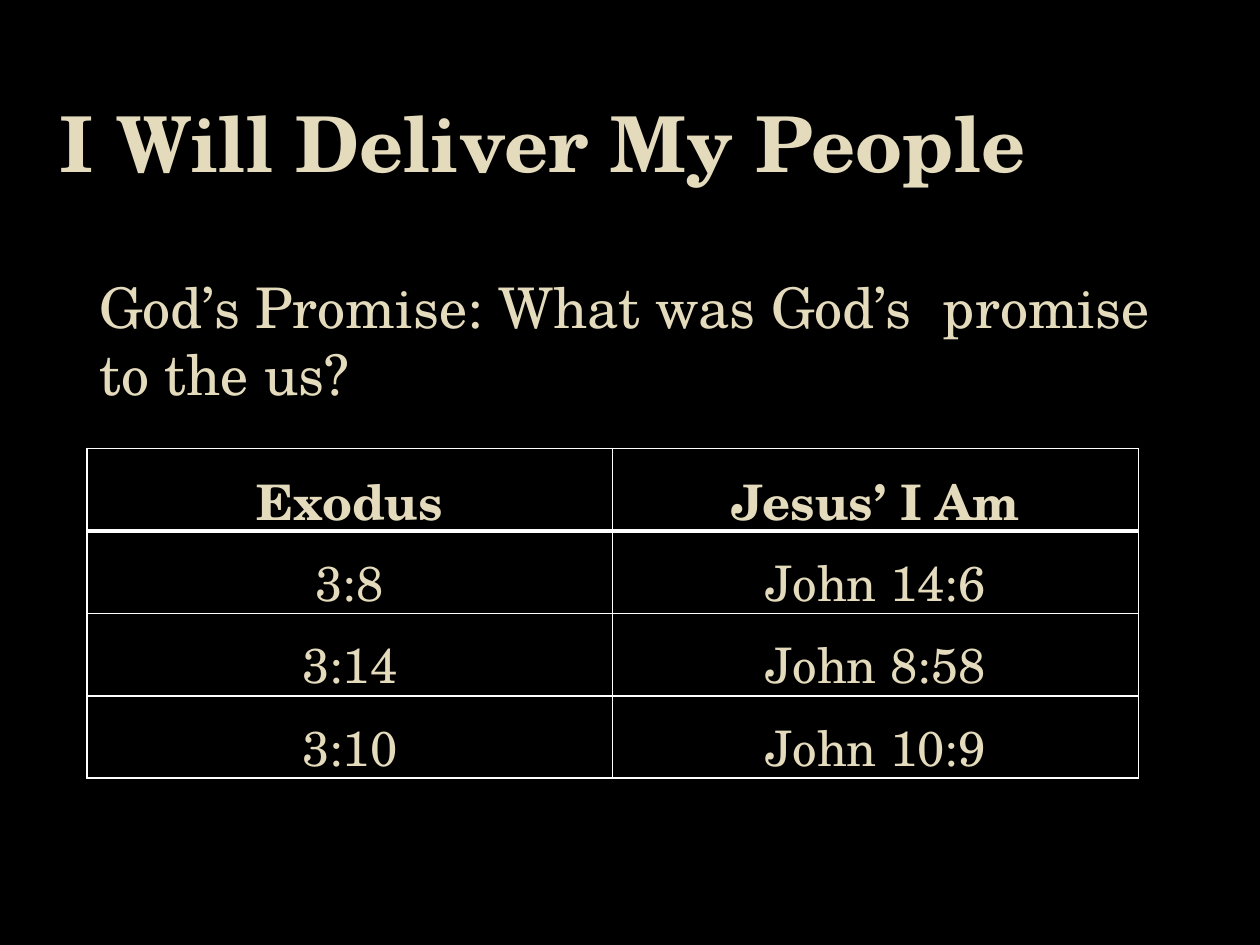
"""Build the slide on God's promise with its table of verses."""
from typing import NamedTuple

from lxml.etree import SubElement
from pptx import Presentation
from pptx.dml.color import RGBColor
from pptx.enum.text import MSO_ANCHOR as Anchor, PP_ALIGN as Align
from pptx.oxml.ns import qn
from pptx.util import Cm, Pt

FONT = "TeX Gyre Schola"
CREAM, WHITE, BLACK = "E4DABC", "FFFFFF", "000000"


class Style(NamedTuple):
    size: int
    bold: bool = False
    align: Align = Align.LEFT


class Box(NamedTuple):
    left: float
    top: float
    width: float
    height: float

    def lengths(self) -> list[Cm]:
        return [Cm(value) for value in self]


class VersePair(NamedTuple):
    exodus: str
    jesus: str


VERSES = [
    VersePair("Exodus", "Jesus’ I Am"),
    VersePair("3:8", "John 14:6"),
    VersePair("3:14", "John 8:58"),
    VersePair("3:10", "John 10:9"),
]
HEADING = Style(28, True, Align.CENTER)
VERSE = Style(28, False, Align.CENTER)


def paint(target, color: str) -> None:
    target.solid()
    target.fore_color.rgb = RGBColor.from_string(color)


def write(frame, text: str, style: Style) -> None:
    paragraph = frame.paragraphs[0]
    paragraph.alignment = style.align
    run = paragraph.add_run()
    run.text = text
    run.font.name = FONT
    run.font.size = Pt(style.size)
    run.font.bold = style.bold
    paint(run.font.fill, CREAM)


def add_text(slide, box: Box, text: str, style: Style, anchor: Anchor) -> None:
    frame = slide.shapes.add_textbox(*box.lengths()).text_frame
    frame.word_wrap = True
    frame.vertical_anchor = anchor
    write(frame, text, style)


def add_border(cell, side: str, points: int) -> None:
    line = SubElement(cell._tc.get_or_add_tcPr(), qn(f"a:ln{side}"), w=str(Pt(points)))
    fill = SubElement(line, qn("a:solidFill"))
    SubElement(fill, qn("a:srgbClr"), val=WHITE)


def add_verse_table(slide, box: Box) -> None:
    columns = len(VersePair._fields)
    table = slide.shapes.add_table(len(VERSES), columns, *box.lengths()).table
    table.horz_banding = False
    for row, pair in enumerate(VERSES):
        for column, text in enumerate(pair):
            cell = table.cell(row, column)
            cell.margin_top = Cm(0.3)
            widths = {"L": 1, "R": 1, "T": 3 if row == 1 else 1, "B": 3 if row == 0 else 1}
            for side, points in widths.items():
                add_border(cell, side, points)
            cell.fill.background()
            write(cell.text_frame, text, HEADING if row == 0 else VERSE)


def main() -> None:
    deck = Presentation()
    deck.slide_width, deck.slide_height = Cm(25.4), Cm(19.05)
    slide = deck.slides.add_slide(deck.slide_layouts[6])
    paint(slide.background.fill, BLACK)
    add_text(slide, Box(0, 1.02, 21.9, 3.68), "I Will Deliver My People",
             Style(44, True, Align.CENTER), Anchor.MIDDLE)
    add_text(slide, Box(1.75, 5.36, 21.9, 4.37),
             "God’s Promise: What was God’s  promise to the us?", Style(32), Anchor.TOP)
    add_verse_table(slide, Box(1.75, 9.04, 21.2, 6.65))
    deck.save("out.pptx")


if __name__ == "__main__":
    main()
